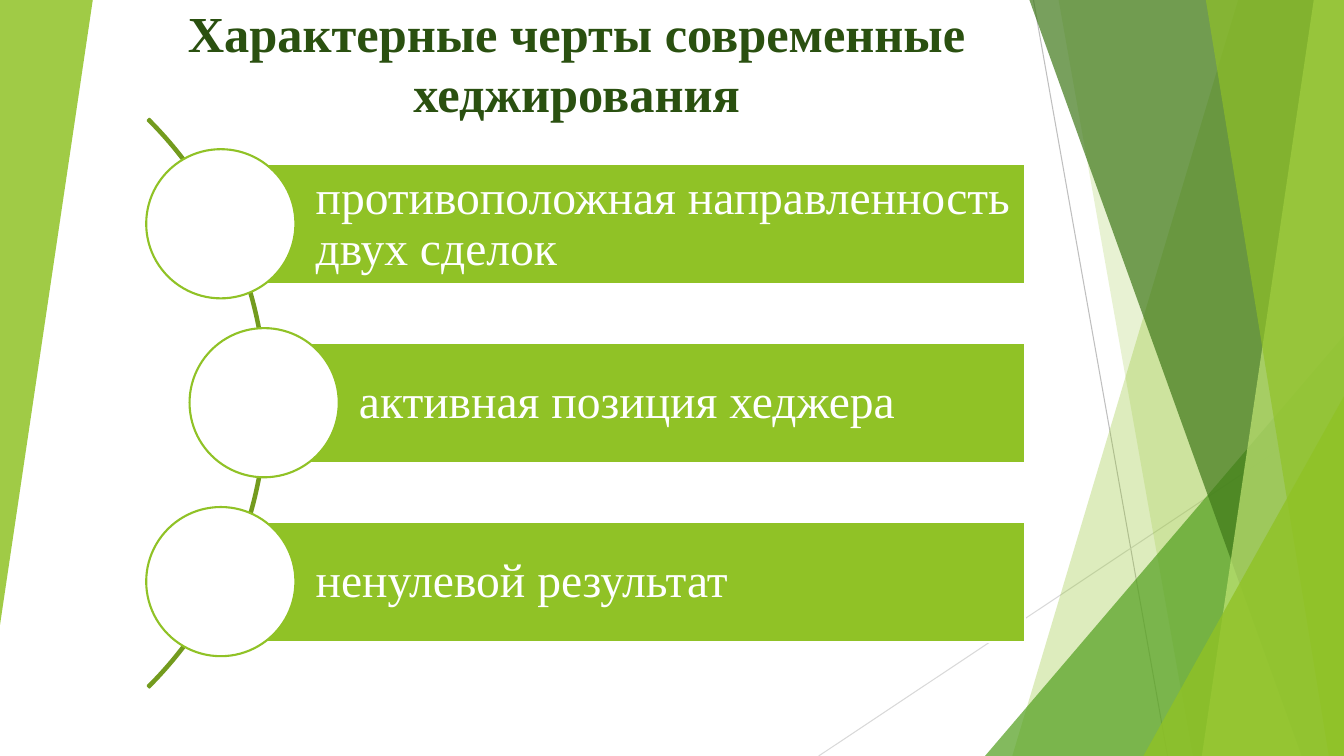
from dataclasses import dataclass

from lxml import etree
from pptx import Presentation
from pptx.dml.color import RGBColor
from pptx.enum.shapes import MSO_CONNECTOR as Conn, MSO_SHAPE as Kind
from pptx.enum.text import MSO_ANCHOR as Anchor, MSO_AUTO_SIZE as Fit, PP_ALIGN as Align
from pptx.oxml.ns import qn
from pptx.util import Inches, Pt

WIDE, HIGH = 13.33, 7.5


@dataclass(frozen=True)
class Theme:
    font: str = "Times New Roman"
    head_size: int = 36
    body_size: int = 34
    line_size: float = 1.5
    thin_size: float = 0.75
    lime: str = "90C226"
    pale: str = "C0E474"
    leaf: str = "54A021"
    dark: str = "3F7819"
    arc: str = "739B1E"
    head: str = "2A5010"
    white: str = "FFFFFF"
    gray: str = "BFBFBF"
    light: str = "D9D9D9"


class Deck:
    def __init__(self, theme):
        self.theme = theme
        self.prs = Presentation()
        self.prs.slide_width, self.prs.slide_height = Inches(WIDE), Inches(HIGH)
        self.slide = self.prs.slides.add_slide(self.prs.slide_layouts[5])
        self.shapes = self.slide.shapes

    def paint(self, shape, fill=None, alpha=100, line=None):
        shape.shadow.inherit = False
        if fill:
            shape.fill.solid()
            shape.fill.fore_color.rgb = RGBColor.from_string(fill)
            if alpha < 100:
                color = shape._element.spPr.find(".//" + qn("a:srgbClr"))
                etree.SubElement(color, qn("a:alpha"), val=str(alpha * 1000))
        else:
            shape.fill.background()
        if line:
            shape.line.color.rgb = RGBColor.from_string(line)
            shape.line.width = Pt(self.theme.line_size)
        else:
            shape.line.fill.background()

    def line(self, x1, y1, x2, y2, color):
        ends = [Inches(v) for v in (x1, y1, x2, y2)]
        line = self.shapes.add_connector(Conn.STRAIGHT, *ends)
        line.line.color.rgb = RGBColor.from_string(color)
        line.line.width = Pt(self.theme.thin_size)
        etree.SubElement(line._element.spPr, qn("a:effectLst"))

    def band(self, top, base, fill, alpha):
        """Fill from a slanted left edge to the right side of the slide."""
        right, foot = Inches(WIDE), Inches(HIGH)
        pen = self.shapes.build_freeform(Inches(top), 0)
        pen.add_line_segments([(right, 0), (right, foot), (Inches(base), foot)])
        self.paint(pen.convert_to_shape(), fill, alpha)

    def shape(self, kind, box, adjust=(), **style):
        shape = self.shapes.add_shape(kind, *[Inches(v) for v in box])
        for i, value in enumerate(adjust):
            shape.adjustments[i] = value
        self.paint(shape, **style)
        return shape

    def wedge(self, box, fill, alpha, turn=0):
        shape = self.shape(Kind.ISOSCELES_TRIANGLE, box, [1], fill=fill, alpha=alpha)
        shape.rotation = turn

    def label(self, shape, text, size, color, bold=False):
        frame = shape.text_frame
        frame.text = text
        frame.word_wrap = True
        frame.auto_size = Fit.NONE
        par = frame.paragraphs[0]
        font = par.runs[0].font
        font.name, font.size, font.bold = self.theme.font, Pt(size), bold
        font.color.rgb = RGBColor.from_string(color)
        return frame, par

    def title(self, text, box):
        head = self.shapes.title
        head.left, head.top, head.width, head.height = [Inches(v) for v in box]
        tree = head._element.getparent()
        tree.append(head._element)
        frame, par = self.label(head, text, self.theme.head_size, self.theme.head, True)
        frame.vertical_anchor = Anchor.BOTTOM
        par.alignment = Align.CENTER

    def item(self, text, left, top, right):
        """Bar with text and a round marker over its left end."""
        tone = self.theme
        bar = self.shape(Kind.RECTANGLE, (left, top, right - left, 1.19),
                         fill=tone.lime, line=tone.white)
        frame, par = self.label(bar, text, tone.body_size, tone.white)
        frame.vertical_anchor = Anchor.MIDDLE
        frame.margin_left = Inches(0.94)
        frame.margin_right = frame.margin_top = frame.margin_bottom = Inches(0.09)
        par.alignment, par.line_spacing = Align.LEFT, 0.9
        self.shape(Kind.OVAL, (left - 0.74, top - 0.15, 1.48, 1.48),
                   fill=tone.white, line=tone.lime)


def main():
    tone = Theme()
    deck = Deck(tone)

    deck.line(10.25, 0, 11.58, HIGH, tone.gray)
    deck.line(WIDE, 4.03, 8.12, HIGH, tone.light)
    deck.band(12.28, 10.04, tone.lime, 30)
    deck.band(10.5, 11.83, tone.lime, 20)
    deck.wedge((9.77, 3.33, 3.56, 4.17), tone.leaf, 72)
    for top, base, fill, alpha in [
        (10.21, 12.91, tone.dark, 70),
        (13.03, 11.92, tone.pale, 70),
        (11.96, 13.18, tone.lime, 65),
    ]:
        deck.band(top, base, fill, alpha)
    deck.wedge((11.34, 3.93, 1.99, 3.57), tone.lime, 80)
    deck.wedge((0, 0, 0.92, 6.2), tone.lime, 85, turn=180)

    deck.title("Характерные черты современные хеджирования", (0.84, 0.16, 9.76, 1.11))
    deck.shape(Kind.BLOCK_ARC, (-5.33, 0.01, 7.98, 7.98), [189, 27, 0.003], line=tone.arc)
    items = [
        ("противоположная направленность двух сделок", 2.19),
        ("активная позиция хеджера", 2.62),
        ("ненулевой результат", 2.19),
    ]
    for i, (text, left) in enumerate(items):
        deck.item(text, left, 1.63 + 1.775 * i, 10.17)

    deck.prs.save("out.pptx")


if __name__ == "__main__":
    main()
